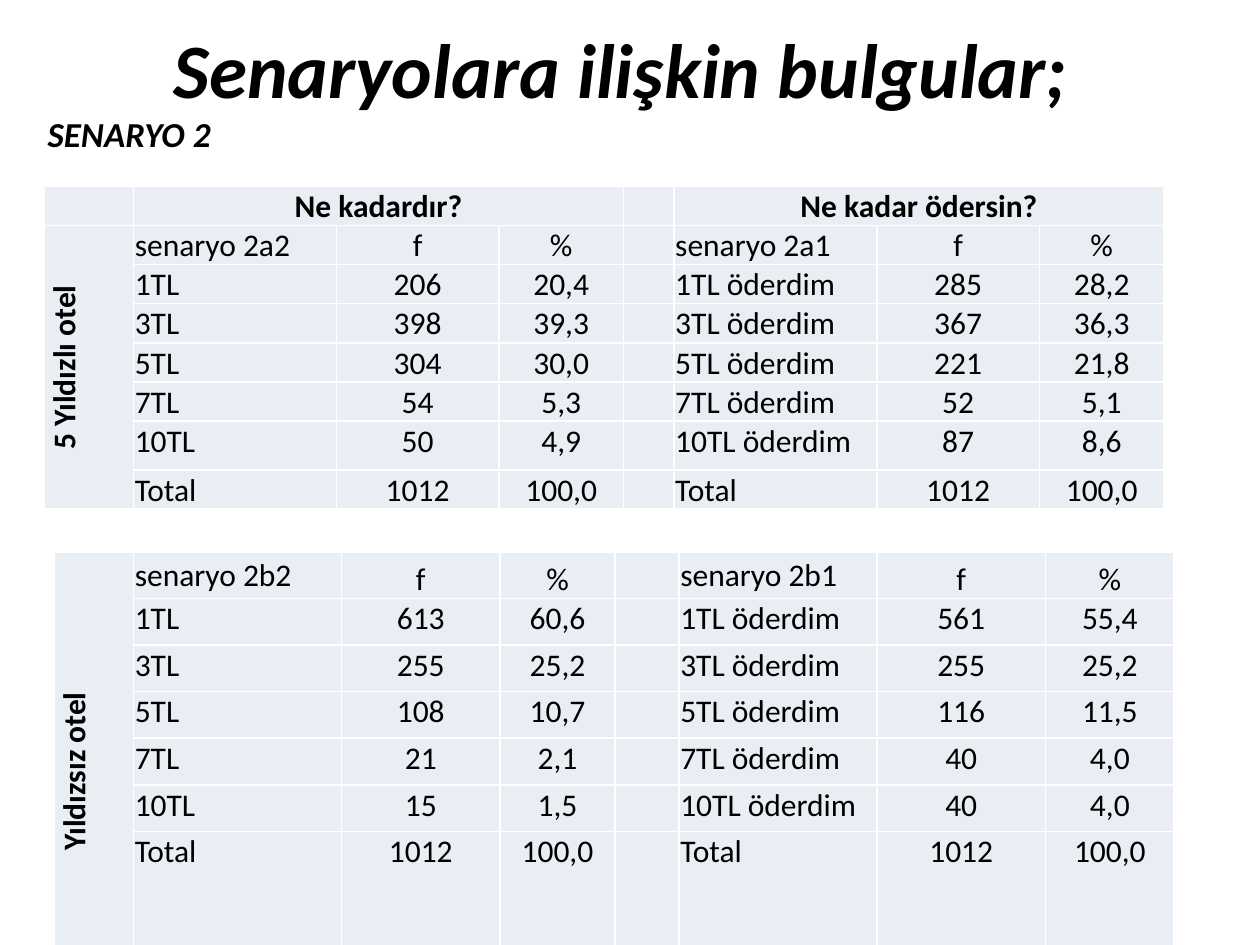
from lxml import etree
from pptx import Presentation
from pptx import util as u
from pptx.dml.color import RGBColor
from pptx.enum import text
from pptx.oxml import ns

BLACK = RGBColor(0x00, 0x00, 0x00)
WHITE = RGBColor(0xFF, 0xFF, 0xFF)
CELL_FILL = RGBColor(0xE9, 0xED, 0xF4)
FONT = "Calibri"
CENTER = text.PP_ALIGN.CENTER
LEFT = text.PP_ALIGN.LEFT
TOP = text.MSO_ANCHOR.TOP
MIDDLE = text.MSO_ANCHOR.MIDDLE
BOTTOM = text.MSO_ANCHOR.BOTTOM

PRICES = ["1TL", "3TL", "5TL", "7TL", "10TL"]
LABELS = PRICES + ["Total"]
PAY_LABELS = [f"{price} öderdim" for price in PRICES] + ["Total"]

FIVE_STAR_ESTIMATE = [("206", "20,4"), ("398", "39,3"), ("304", "30,0"),
                      ("54", "5,3"), ("50", "4,9"), ("1012", "100,0")]
FIVE_STAR_PAYMENT = [("285", "28,2"), ("367", "36,3"), ("221", "21,8"),
                     ("52", "5,1"), ("87", "8,6"), ("1012", "100,0")]
NO_STAR_ESTIMATE = [("613", "60,6"), ("255", "25,2"), ("108", "10,7"),
                    ("21", "2,1"), ("15", "1,5"), ("1012", "100,0")]
NO_STAR_PAYMENT = [("561", "55,4"), ("255", "25,2"), ("116", "11,5"),
                   ("40", "4,0"), ("40", "4,0"), ("1012", "100,0")]


def format_paragraph(paragraph, size, alignment, bold=False, italic=False):
    paragraph.alignment = alignment
    for run in paragraph.runs:
        run.font.name = FONT
        run.font.size = u.Pt(size)
        run.font.bold = bold
        run.font.italic = italic
        run.font.color.rgb = BLACK


def add_heading(slide, box, wording, size, alignment, anchor):
    shape = slide.shapes.add_textbox(*map(u.Inches, box))
    frame = shape.text_frame
    frame.word_wrap = True
    frame.vertical_anchor = anchor
    frame.text = wording
    format_paragraph(frame.paragraphs[0], size, alignment, bold=True, italic=True)


def style_cell(cell):
    cell.margin_left = cell.margin_right = cell.margin_top = u.Inches(0.01)
    cell.margin_bottom = 0
    properties = cell._tc.get_or_add_tcPr()
    for side in ("a:lnL", "a:lnR", "a:lnT", "a:lnB"):
        line = etree.SubElement(properties, ns.qn(side), w=str(u.Pt(1)))
        fill = etree.SubElement(line, ns.qn("a:solidFill"))
        etree.SubElement(fill, ns.qn("a:srgbClr"), val=str(WHITE))
    cell.fill.solid()
    cell.fill.fore_color.rgb = CELL_FILL


def write_cell(cell, wording, alignment=CENTER, anchor=TOP, bold=False):
    cell.text_frame.text = wording
    cell.vertical_anchor = anchor
    format_paragraph(cell.text_frame.paragraphs[0], 18, alignment, bold)


def add_half(table, first_row, first_column, scenario, labels, values):
    rows = [(scenario, "f", "%")]
    rows += [(label, *pair) for label, pair in zip(labels, values)]
    for row, entries in enumerate(rows):
        for column, wording in enumerate(entries):
            anchor = TOP
            if row == 0:
                anchor = BOTTOM if column else MIDDLE
            write_cell(table.cell(first_row + row, first_column + column),
                       wording, CENTER if column else LEFT, anchor)


def add_scenario_table(slide, box, widths, heights, hotel, halves, headings=()):
    shape = slide.shapes.add_table(len(heights), len(widths), *map(u.Inches, box))
    table = shape.table
    table.first_row = False
    table.horz_banding = False
    for column, width in zip(table.columns, widths):
        column.width = u.Inches(width)
    for row, height in zip(table.rows, heights):
        row.height = u.Inches(height)
    for cell in table.iter_cells():
        style_cell(cell)

    first_row = 1 if headings else 0
    for first_column, heading in zip((1, 5), headings):
        cell = table.cell(0, first_column)
        cell.merge(table.cell(0, first_column + 2))
        write_cell(cell, heading, anchor=BOTTOM, bold=True)

    hotel_cell = table.cell(first_row, 0)
    hotel_cell.merge(table.cell(len(heights) - 1, 0))
    write_cell(hotel_cell, hotel, anchor=BOTTOM, bold=True)
    hotel_cell._tc.get_or_add_tcPr().set("vert", "vert270")

    for first_column, half in zip((1, 5), halves):
        add_half(table, first_row, first_column, *half)


def main():
    presentation = Presentation()
    presentation.slide_width = u.Inches(10)
    presentation.slide_height = u.Inches(7.5)
    slide = presentation.slides.add_slide(presentation.slide_layouts[6])

    add_heading(slide, (0.43, 0.07, 9, 0.93), "Senaryolara ilişkin bulgular;",
                44, CENTER, MIDDLE)
    add_heading(slide, (0.28, 0.84, 3.23, 0.44), "SENARYO 2", 20, LEFT, TOP)

    add_scenario_table(
        slide, (0.35, 1.48, 8.9, 2.58),
        [0.71, 1.61, 1.29, 0.99, 0.4, 1.61, 1.29, 0.99],
        [0.31] * 6 + [0.39, 0.31],
        "5 Yıldızlı otel",
        [("senaryo 2a2", LABELS, FIVE_STAR_ESTIMATE),
         ("senaryo 2a1", PAY_LABELS, FIVE_STAR_PAYMENT)],
        ("Ne kadardır?", "Ne kadar ödersin?"))
    add_scenario_table(
        slide, (0.43, 4.38, 8.9, 3.45),
        [0.63, 1.65, 1.26, 0.91, 0.51, 1.57, 1.34, 1.02],
        [0.37] * 6 + [1.23],
        "Yıldızsız otel",
        [("senaryo 2b2", LABELS, NO_STAR_ESTIMATE),
         ("senaryo 2b1", PAY_LABELS, NO_STAR_PAYMENT)])

    presentation.save("out.pptx")


if __name__ == "__main__":
    main()
